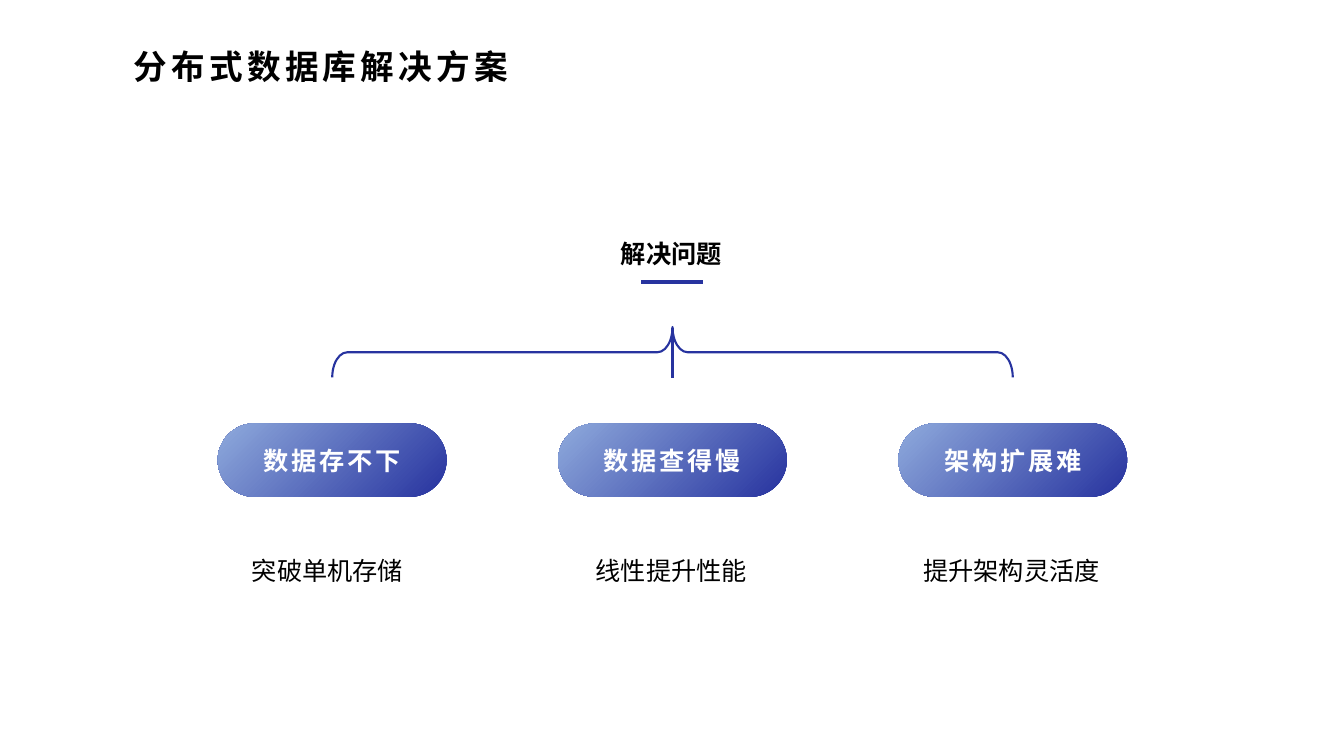
from dataclasses import dataclass

from pptx import Presentation
from pptx.dml.color import RGBColor
from pptx.enum.shapes import MSO_CONNECTOR, MSO_SHAPE
from pptx.enum.text import MSO_ANCHOR, MSO_AUTO_SIZE, PP_ALIGN
from pptx.oxml.ns import qn
from pptx.util import Pt
from lxml import etree

PILL, BRACE = MSO_SHAPE.ROUNDED_RECTANGLE, MSO_SHAPE.LEFT_BRACE
STRAIGHT = MSO_CONNECTOR.STRAIGHT
MIDDLE, CENTER = MSO_ANCHOR.MIDDLE, PP_ALIGN.CENTER
GROW = MSO_AUTO_SIZE.SHAPE_TO_FIT_TEXT

SCALE = 9144  # EMU per px, 100 px to the inch
NAVY, SKY, BLACK, WHITE = "27339F", "8FAADC", "000000", "FFFFFF"
SANS, PLAIN = "Noto Sans CJK SC", "Calibri"


@dataclass
class Style:
    size: int
    face: str
    color: str = BLACK
    bold: bool = False
    space: int = 0


@dataclass
class Text:
    left: int
    top: int
    width: int
    height: int
    words: str
    style: Style
    wrap: bool = False


@dataclass
class Topic:
    problem: str
    result: str
    left: int
    width: int


@dataclass
class Stroke:
    start: tuple[int, int]
    end: tuple[int, int]
    weight: float


HEAD = Style(24, SANS, bold=True, space=3)
SUB = Style(18, SANS, bold=True)
BADGE = Style(18, SANS, WHITE, True, 2)
BODY = Style(18, PLAIN)

TOPICS = [
    Topic("数据存不下", "突破单机存储", 240, 177),
    Topic("数据查得慢", "线性提升性能", 581, 172),
    Topic("架构扩展难", "提升架构灵活度", 906, 197),
]
TEXTS = [
    Text(123, 41, 925, 50, "分布式数据库解决方案", HEAD, True),
    Text(606, 232, 121, 40, "解决问题", SUB),
] + [Text(t.left, 546, t.width, 40, t.result, BODY) for t in TOPICS]
STROKES = [
    Stroke((636, 280), (697, 280), 3),
    Stroke((667, 325), (667, 375), 1.5),
]
PILL_LEFT, PILL_STEP = 216, 337.5


def px(*values: float) -> list[int]:
    return [round(v * SCALE) for v in values]


def rgb(code: str) -> RGBColor:
    return RGBColor.from_string(code)


def write(frame, words: str, style: Style) -> None:
    frame.text = words
    run = frame.paragraphs[0].runs[0]
    font = run.font
    font.size, font.bold, font.name = Pt(style.size), style.bold, style.face
    font.color.rgb = rgb(style.color)
    props = font._element
    if style.space:
        props.set("spc", str(style.space * 100))
    # East Asian face
    asian = etree.SubElement(props, qn("a:ea"))
    asian.set("typeface", style.face)


def add_text(slide, item: Text) -> None:
    box = slide.shapes.add_textbox(
        *px(item.left, item.top, item.width, item.height))
    frame = box.text_frame
    frame.word_wrap, frame.auto_size = item.wrap, GROW
    write(frame, item.words, item.style)


def add_pill(slide, left: float, words: str) -> None:
    pill = slide.shapes.add_shape(PILL, *px(left, 420, 227, 73))
    pill.shadow.inherit = False
    pill.adjustments[0] = 0.5
    pill.line.fill.background()
    pill.fill.gradient()
    pill.fill.gradient_angle = 135
    for stop, code in zip(pill.fill.gradient_stops, (NAVY, SKY)):
        stop.color.rgb = rgb(code)
    frame = pill.text_frame
    frame.vertical_anchor = MIDDLE
    write(frame, words, BADGE)
    frame.paragraphs[0].alignment = CENTER


def add_brace(slide) -> None:
    brace = slide.shapes.add_shape(BRACE, *px(642, 12, 50, 675))
    brace.shadow.inherit = False
    brace.rotation = 90
    brace.adjustments[0], brace.adjustments[1] = 0.3, 0.5
    brace.fill.background()
    brace.line.color.rgb, brace.line.width = rgb(NAVY), Pt(1.5)


def add_stroke(slide, item: Stroke) -> None:
    line = slide.shapes.add_connector(STRAIGHT, *px(*item.start, *item.end))
    line.line.color.rgb, line.line.width = rgb(NAVY), Pt(item.weight)
    etree.SubElement(line._element.spPr, qn("a:effectLst"))


def main() -> None:
    deck = Presentation()
    deck.slide_width, deck.slide_height = px(1333, 750)
    slide = deck.slides.add_slide(deck.slide_layouts[6])

    # Pills for the three problems
    for i, topic in enumerate(TOPICS):
        add_pill(slide, PILL_LEFT + i * PILL_STEP, topic.problem)

    # Bracket, underline and stem
    add_brace(slide)
    for item in STROKES:
        add_stroke(slide, item)

    # Title, subject and results
    for item in TEXTS:
        add_text(slide, item)

    deck.save("out.pptx")


if __name__ == "__main__":
    main()
